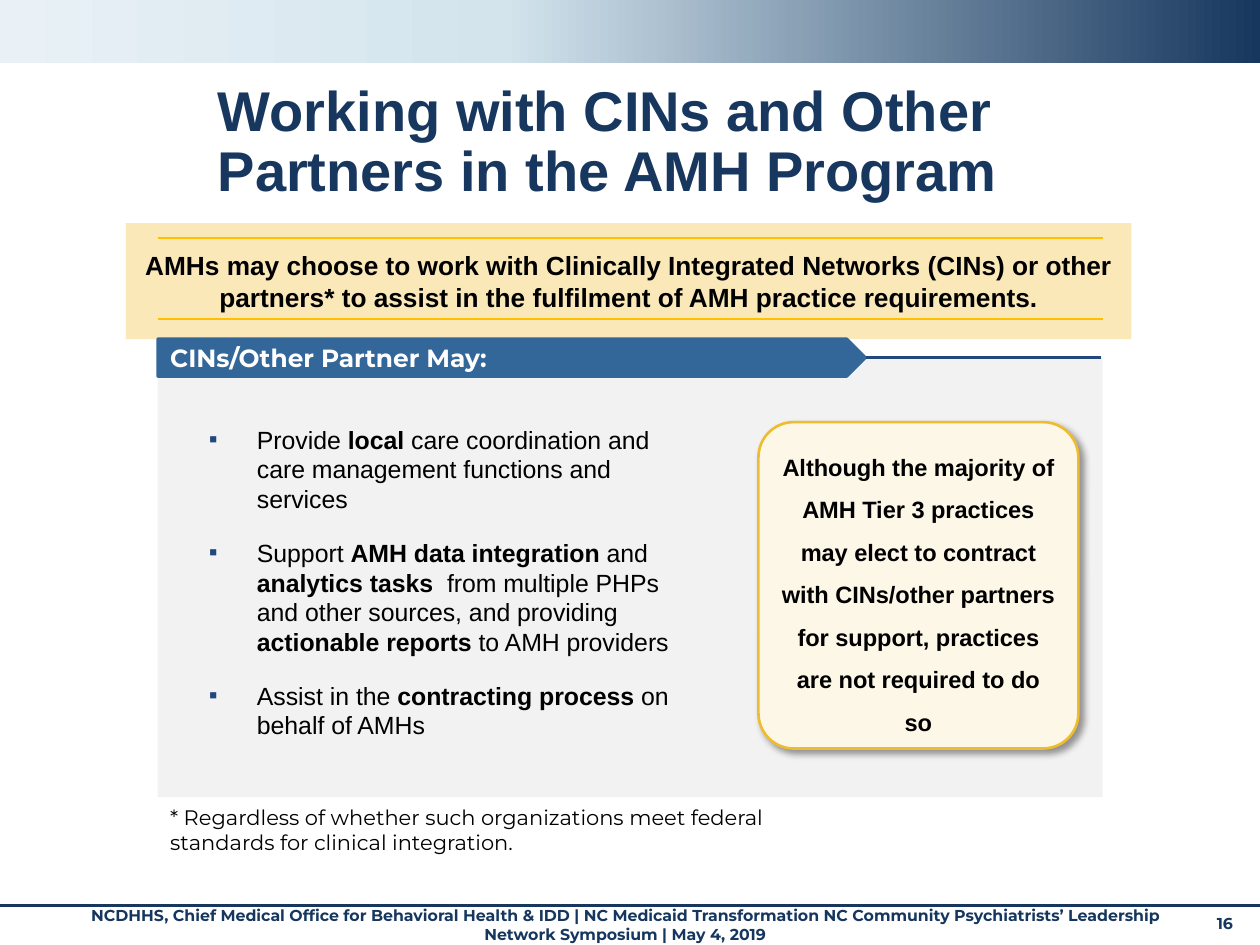
from pptx import Presentation
from pptx.dml.color import RGBColor
from pptx.enum.shapes import MSO_CONNECTOR, MSO_SHAPE
from pptx.enum.text import MSO_ANCHOR, PP_ALIGN
from pptx.oxml import parse_xml
from pptx.oxml.ns import nsdecls
from pptx.util import Cm, Pt

STRAIGHT = MSO_CONNECTOR.STRAIGHT
RECTANGLE = MSO_SHAPE.RECTANGLE
ROUNDED = MSO_SHAPE.ROUNDED_RECTANGLE
PENTAGON = MSO_SHAPE.PENTAGON
TOP, MIDDLE = MSO_ANCHOR.TOP, MSO_ANCHOR.MIDDLE
LEFT, CENTER = PP_ALIGN.LEFT, PP_ALIGN.CENTER

TITLE = "Working with CINs and Other Partners in the AMH Program"
BANNER = (
    "AMHs may choose to work with Clinically Integrated Networks (CINs) or other "
    "partners* to assist in the fulfilment of AMH practice requirements."
)
TAG = "CINs/Other Partner May:"
BULLETS = [
    "Provide **local** care coordination and care management functions and services",
    "Support **AMH data integration **and **analytics tasks  **from multiple PHPs "
    "and other sources, and providing **actionable reports **to AMH providers",
    "Assist in the **contracting process** on behalf of AMHs",
]
CALLOUT = (
    "Although the majority of AMH Tier 3 practices may elect to contract with "
    "CINs/other partners for support, practices are not required to do so"
)
FOOTNOTE = (
    "* Regardless of whether such organizations meet federal standards "
    "for clinical integration."
)
FOOTER = (
    "NCDHHS, Chief Medical Office for Behavioral Health & IDD | NC Medicaid "
    "Transformation NC Community Psychiatrists’ Leadership Network Symposium | May 4, 2019"
)
PAGE_NUMBER = "16"

THEME = {
    "body_font": "Arial", "accent_font": "Montserrat",
    "navy": "17375E", "footer": "15365E", "blue": "336699", "bullet": "1F497D",
    "gold": "FFC000", "callout_line": "EFBB2F", "callout_fill": "FDF7E7",
    "banner": "FAE8B8", "panel": "F2F2F2", "black": "000000", "white": "FFFFFF",
    "gradient": [(0, "17375E"), (60, "D3E4ED"), (100, "E9F1F6")],
    "title_size": 32, "banner_size": 15, "body_size": 14.2, "callout_size": 13.5,
    "note_size": 12, "footer_size": 9,
}

SLIDE_WIDTH, SLIDE_HEIGHT = 25.4, 19.05
PANEL_LEFT, PANEL_WIDTH = 3.18, 19.05
PANEL_RIGHT = PANEL_LEFT + PANEL_WIDTH
PANEL_TOP = 7.21
BANNER_RULES = (4.8, 6.43)


def color(name):
    return RGBColor.from_string(THEME[name])


def add_box(slide, kind, box, fill=None, line=None, width=1.5):
    shape = slide.shapes.add_shape(kind, *map(Cm, box))
    shape.shadow.inherit = False
    if fill:
        shape.fill.solid()
        shape.fill.fore_color.rgb = color(fill)
    if line:
        shape.line.color.rgb = color(line)
        shape.line.width = Pt(width)
    else:
        shape.line.fill.background()
    return shape


def add_rule(slide, start, end, y, line, width):
    connector = slide.shapes.add_connector(STRAIGHT, Cm(start), Cm(y), Cm(end), Cm(y))
    connector.line.color.rgb = color(line)
    connector.line.width = Pt(width)
    connector._element.spPr.append(parse_xml(f"<a:effectLst {nsdecls('a')}/>"))
    return connector


def add_text_box(slide, box):
    return slide.shapes.add_textbox(*map(Cm, box))


def write(shape, *texts, size, font="body_font", ink="black", bold=False, align=LEFT,
          anchor=TOP, spacing=None, after=0, bullet=False, margins=None):
    frame = shape.text_frame
    frame.word_wrap = True
    frame.vertical_anchor = anchor
    if margins:
        frame.margin_left = frame.margin_right = Cm(margins[0])
        frame.margin_top = frame.margin_bottom = Cm(margins[1])
    for index, text in enumerate(texts):
        paragraph = frame.add_paragraph() if index else frame.paragraphs[0]
        paragraph.alignment = align
        paragraph.space_after = Pt(after)
        if spacing:
            paragraph.line_spacing = spacing
        if bullet:
            add_bullet(paragraph)
        for position, part in enumerate(text.split("**")):
            run = paragraph.add_run()
            run.text = part
            run.font.name = THEME[font]
            run.font.size = Pt(THEME[size])
            run.font.bold = bold or position % 2 == 1
            run.font.color.rgb = color(ink)


def add_bullet(paragraph):
    properties = paragraph._p.get_or_add_pPr()
    properties.set("marL", str(Cm(1.35)))
    properties.set("indent", str(Cm(-0.97)))
    for markup in (
        f'<a:buClr {nsdecls("a")}><a:srgbClr val="{THEME["bullet"]}"/></a:buClr>',
        f'<a:buFont {nsdecls("a")} typeface="{THEME["body_font"]}"/>',
        f'<a:buChar {nsdecls("a")} char="▪"/>',
    ):
        properties.append(parse_xml(markup))


def fill_gradient(shape):
    stops = "".join(
        f'<a:gs pos="{position * 1000}"><a:srgbClr val="{value}"/></a:gs>'
        for position, value in THEME["gradient"]
    )
    shape._element.spPr.find("{*}prstGeom").addnext(parse_xml(
        f'<a:gradFill {nsdecls("a")} rotWithShape="1"><a:gsLst>{stops}</a:gsLst>'
        '<a:lin ang="10800000" scaled="0"/></a:gradFill>'
    ))


def add_shadow(shape):
    shape._element.spPr.find("{*}effectLst").append(parse_xml(
        f'<a:outerShdw {nsdecls("a")} blurRad="{Pt(4)}" dist="{Pt(3)}" dir="2700000" '
        f'algn="tl" rotWithShape="0"><a:srgbClr val="{THEME["black"]}">'
        '<a:alpha val="40000"/></a:srgbClr></a:outerShdw>'
    ))


def add_frame(slide):
    footer = {"size": "footer_size", "font": "accent_font", "ink": "footer", "bold": True}
    write(add_text_box(slide, (1.27, 18.14, 22.66, 0.94)), FOOTER, align=CENTER, **footer)
    write(add_text_box(slide, (24.28, 18.29, 1.12, 0.76)), PAGE_NUMBER, **footer)
    fill_gradient(add_box(slide, RECTANGLE, (0, 0, SLIDE_WIDTH, 1.27)))
    add_rule(slide, 0, SLIDE_WIDTH, 18.26, "navy", 1.75)
    write(add_text_box(slide, (4.14, 1.55, 18.06, 3.28)), TITLE,
          size="title_size", ink="navy", bold=True, spacing=0.9)


def add_content(slide):
    panel = add_box(slide, ROUNDED, (PANEL_LEFT, PANEL_TOP, PANEL_WIDTH, 8.86), "panel")
    panel.adjustments[0] = 0
    banner = add_box(slide, RECTANGLE, (2.54, 4.5, 20.27, 2.34), "banner")
    write(banner, BANNER, size="banner_size", bold=True, align=CENTER, anchor=MIDDLE,
          after=9, margins=(0.2, 0.1))
    for y in BANNER_RULES:
        add_rule(slide, PANEL_LEFT, PANEL_RIGHT, y, "gold", 1)
    tag = add_box(slide, PENTAGON, (PANEL_LEFT, 6.83, 14.27, 0.76), "blue", "blue")
    write(tag, TAG, size="body_size", font="accent_font", ink="white", bold=True,
          anchor=MIDDLE)
    tag_rule = add_rule(slide, 17.45, 22.2, PANEL_TOP, "bullet", 1.5)
    tag_rule.begin_connect(tag, 3)
    write(add_text_box(slide, (3.58, 8.43, 10.8, 6.73)), *BULLETS,
          size="body_size", after=13.5, bullet=True)
    callout = add_box(slide, ROUNDED, (15.29, 8.51, 6.45, 6.58),
                      "callout_fill", "callout_line")
    callout.adjustments[0] = 0.11
    add_shadow(callout)
    write(callout, CALLOUT, size="callout_size", bold=True, align=CENTER,
          spacing=1.5, after=4.5)
    write(add_text_box(slide, (PANEL_LEFT, 16.1, 13.26, 1.27)), FOOTNOTE,
          size="note_size", font="accent_font")


def main():
    """Build the slide on working with CINs and other partners."""
    presentation = Presentation()
    presentation.slide_width, presentation.slide_height = Cm(SLIDE_WIDTH), Cm(SLIDE_HEIGHT)
    slide = presentation.slides.add_slide(presentation.slide_layouts[6])
    add_frame(slide)
    add_content(slide)
    presentation.save("out.pptx")


if __name__ == "__main__":
    main()
